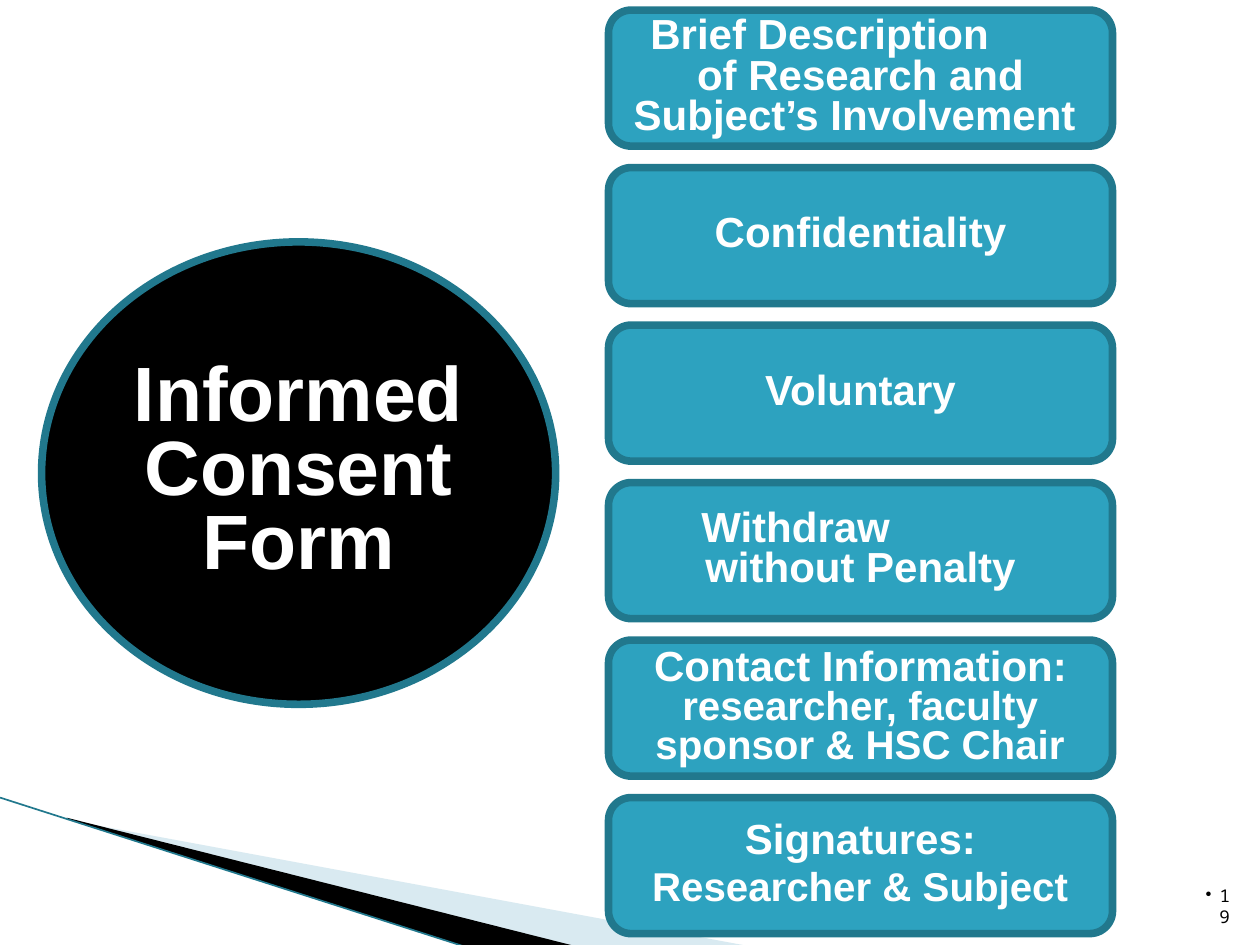
import pptx
import pptx.util
from lxml import etree
from pptx.dml.color import RGBColor
from pptx.enum.shapes import MSO_CONNECTOR, MSO_SHAPE
from pptx.enum.text import MSO_ANCHOR, PP_ALIGN
from pptx.oxml.ns import qn
from pptx.util import Inches, Pt

WHITE = RGBColor(0xFF, 0xFF, 0xFF)
BLACK = RGBColor(0, 0, 0)
TEAL = RGBColor(0x2D, 0xA2, 0xBF)
DARK_TEAL = RGBColor(0x21, 0x78, 0x8D)
PALE_BLUE = RGBColor(0xA0, 0xCB, 0xDC)

COL_LEFT, COL_WIDTH = 4.83, 4
ROW_TOP, ROW_PITCH, ROW_HEIGHT = 0.08, 1.25, 1.08

# Each topic is a list of paragraphs: (right indent, space before, runs of (text, size))
TOPICS = [
    [(0.65, 0, [("Brief Description", 24)]),
     (0, 0, [("of Research and Subject’s Involvement ", 24)])],
    [(0, 0, [("Confidentiality", 24)])],
    [(0, 0, [("Voluntary", 24)])],
    [(1.03, 0, [("Withdraw", 24)]),
     (0, 0, [("without Penalty", 24)])],
    [(0, 0, [("Contact Information: ", 24),
             ("researcher, faculty sponsor & HSC Chair", 23)])],
    [(0, 0, [("Signatures:", 24)]),
     (0, 5, [("Researcher & Subject", 23)])],
]


def add_run(p, text, size, color, font="Arial", bold=True):
    r = p.add_run()
    r.text = text
    r.font.name = font
    r.font.size = Pt(size)
    r.font.bold = bold
    r.font.color.rgb = color


def add_panel(s, kind, left, top, width, height, fill, paragraphs):
    """Outlined shape with centred bold white text."""
    sp = s.shapes.add_shape(kind, Inches(left), Inches(top), Inches(width), Inches(height))
    sp.shadow.inherit = False
    sp.fill.solid()
    sp.fill.fore_color.rgb = fill
    sp.line.color.rgb = DARK_TEAL
    sp.line.width = Pt(4.33)
    tf = sp.text_frame
    tf.word_wrap = True
    tf.vertical_anchor = MSO_ANCHOR.MIDDLE
    for i, (right_indent, before, runs) in enumerate(paragraphs):
        p = tf.add_paragraph() if i else tf.paragraphs[0]
        p.alignment = PP_ALIGN.CENTER
        p.line_spacing = 0.8
        p.space_before = Pt(before)
        pPr = p._p.get_or_add_pPr()
        pPr.set("marL", "0")
        pPr.set("marR", str(Inches(right_indent)))
        for text, size in runs:
            add_run(p, text, size, WHITE)


def add_wedge(s, points, fill, alpha=None):
    """Filled outline; points are in hundredths of an inch, alpha in percent."""
    builder = s.shapes.build_freeform(*points[0], scale=Inches(0.01))
    builder.add_line_segments(points[1:], close=True)
    sp = builder.convert_to_shape()
    sp.shadow.inherit = False
    sp.fill.solid()
    sp.fill.fore_color.rgb = fill
    sp.line.fill.background()
    if alpha:
        color = sp._element.spPr.find(qn("a:solidFill"))[0]
        etree.SubElement(color, qn("a:alpha")).set("val", str(alpha * 1000))


def add_edge_line(s, x1, y1, x2, y2):
    line = s.shapes.add_connector(
        MSO_CONNECTOR.STRAIGHT, Inches(x1), Inches(y1), Inches(x2), Inches(y2))
    line.line.color.rgb = DARK_TEAL
    line.line.width = Pt(0.95)
    etree.SubElement(line._element.spPr, qn("a:effectLst"))


def add_slide_number(s, number):
    sp = s.shapes.add_textbox(Inches(9.46), Inches(7.01), Inches(0.4), Inches(0.4))
    tf = sp.text_frame
    tf.word_wrap = True
    tf.vertical_anchor = MSO_ANCHOR.BOTTOM
    p = tf.paragraphs[0]
    p.alignment = PP_ALIGN.RIGHT
    p.line_spacing = 1.0
    pPr = p._p.get_or_add_pPr()
    pPr.set("marL", str(Inches(0.11)))
    pPr.set("indent", str(-Inches(0.11)))
    etree.SubElement(pPr, qn("a:buChar")).set("char", "•")
    add_run(p, number, 10, BLACK, "Noto Sans Mono", False)


def main():
    prs = pptx.Presentation()
    prs.slide_width, prs.slide_height = Inches(10), Inches(7.5)
    s = prs.slides.add_slide(prs.slide_layouts[6])

    add_wedge(s, [(55, 651), (595, 751), (456, 751), (55, 650)], PALE_BLUE, 40)
    add_wedge(s, [(53, 649), (457, 751), (372, 752), (54, 650)], BLACK)
    add_edge_line(s, 0, 6.33, 3.71, 7.52)
    add_slide_number(s, "19")

    for row, paragraphs in enumerate(TOPICS):
        add_panel(s, MSO_SHAPE.ROUNDED_RECTANGLE, COL_LEFT, ROW_TOP + row * ROW_PITCH,
                  COL_WIDTH, ROW_HEIGHT, TEAL, paragraphs)
    add_panel(s, MSO_SHAPE.OVAL, 0.33, 1.92, 4.08, 3.67, BLACK,
              [(0, 0, [("Informed Consent Form", 44)])])

    prs.save("out.pptx")


if __name__ == "__main__":
    main()
